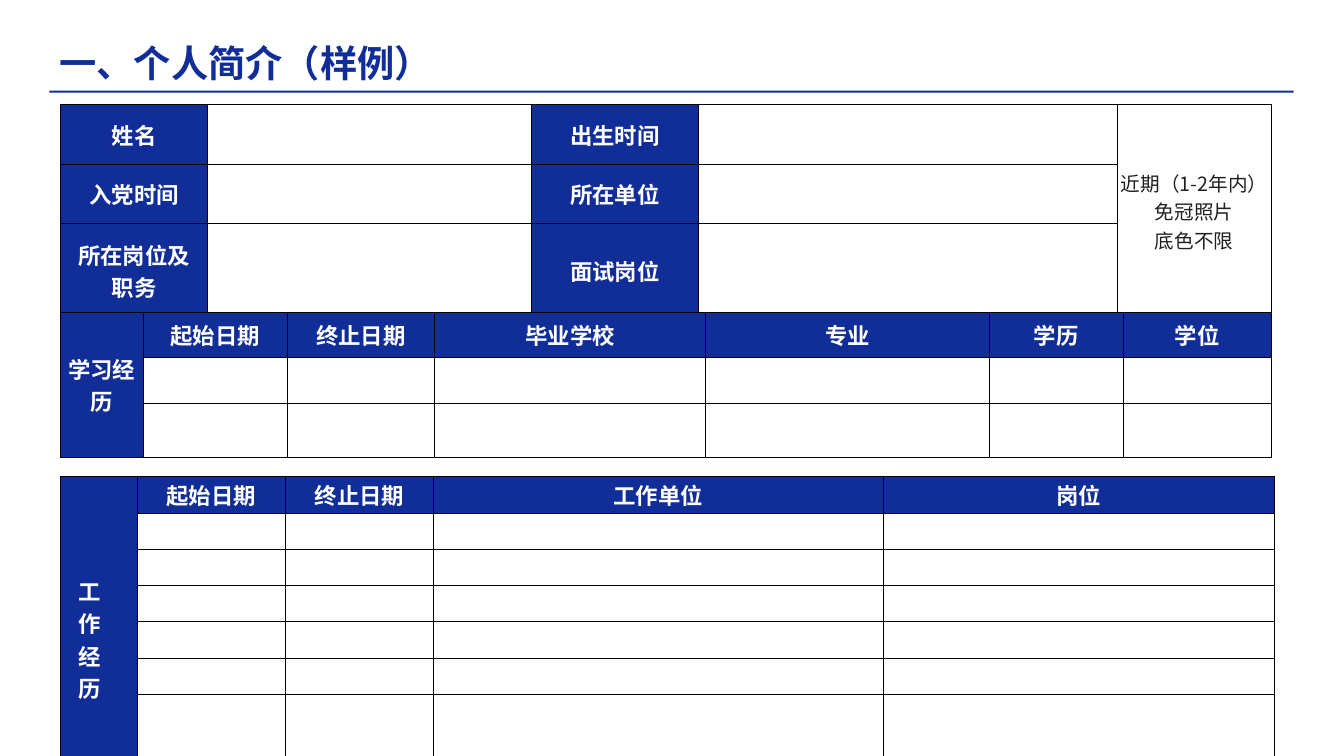
"""Build the personal profile slide with its three form tables."""
from lxml import etree
from pptx import Presentation
from pptx.dml.color import RGBColor
from pptx.enum.shapes import MSO_SHAPE
from pptx.enum.text import MSO_ANCHOR, PP_ALIGN
from pptx.oxml.ns import qn
from pptx.util import Pt

PX = 9144
FONT = "Noto Sans CJK SC"
COLORS = {"blue": "112D98", "white": "FFFFFF", "ink": "202020", "border": "000000"}


def style_text(tf, size, color, bold):
    """Format every run of a text frame."""
    for p in tf.paragraphs:
        for r in p.runs:
            r.font.size = Pt(size)
            r.font.bold = bold
            r.font.name = FONT
            r.font.color.rgb = RGBColor.from_string(COLORS[color])
            ea = etree.SubElement(r.font._element, qn("a:ea"))
            ea.set("typeface", FONT)


def add_form(slide, left, top, cols, rows, texts, merge_col):
    """Add a bordered form table with one column merged over all rows."""
    frame = slide.shapes.add_table(len(rows), len(cols), left * PX, top * PX,
                                   sum(cols) * PX, sum(rows) * PX)
    table = frame.table
    table.first_row = table.horz_banding = False
    for column, width in zip(table.columns, cols):
        column.width = width * PX
    for row, height in zip(table.rows, rows):
        row.height = height * PX
    for i in range(len(rows)):
        for j in range(len(cols)):
            cell = table.cell(i, j)
            cell.margin_left = cell.margin_right = PX
            cell.margin_top = cell.margin_bottom = 0
            cell.vertical_anchor = MSO_ANCHOR.MIDDLE
            tc_pr = cell._tc.get_or_add_tcPr()
            for side in ("lnL", "lnR", "lnT", "lnB"):
                ln = etree.SubElement(tc_pr, qn(f"a:{side}"), w=str(Pt(0.75)))
                fill = etree.SubElement(ln, qn("a:solidFill"))
                etree.SubElement(fill, qn("a:srgbClr"), val=COLORS["border"])
            text = texts.get((i, j))
            if not text:
                cell.fill.background()
                continue
            cell.text_frame.text = text
            for p in cell.text_frame.paragraphs:
                p.alignment = PP_ALIGN.CENTER
            if text.startswith("近期"):
                cell.fill.background()
                style_text(cell.text_frame, 14, "ink", False)
            else:
                cell.fill.solid()
                cell.fill.fore_color.rgb = RGBColor.from_string(COLORS["blue"])
                style_text(cell.text_frame, 16, "white", True)
    table.cell(0, merge_col).merge(table.cell(len(rows) - 1, merge_col))
    return table


prs = Presentation()
prs.slide_width, prs.slide_height = 1333 * PX, 750 * PX
slide = prs.slides.add_slide(prs.slide_layouts[6])

rule = slide.shapes.add_shape(MSO_SHAPE.RECTANGLE, 49 * PX, 90 * PX, 1234 * PX, 2 * PX)
rule.shadow.inherit = False
rule.fill.solid()
rule.fill.fore_color.rgb = RGBColor.from_string(COLORS["blue"])
rule.line.fill.background()

title = slide.shapes.add_textbox(49 * PX, 34 * PX, 1134 * PX, 56 * PX)
tf = title.text_frame
tf.word_wrap = True
tf.vertical_anchor = MSO_ANCHOR.MIDDLE
tf.text = "一、个人简介（样例）"
style_text(tf, 26.6, "blue", True)

profile = {
    (0, 0): "姓名", (0, 2): "出生时间",
    (1, 0): "入党时间", (1, 2): "所在单位",
    (2, 0): "所在岗位及职务", (2, 2): "面试岗位",
    (0, 4): "近期（1-2年内）\n免冠照片\n底色不限",
}
table = add_form(slide, 60, 104, [146, 321, 166, 415, 153], [59] * 3, profile, 4)
for j in (0, 2):
    cell = table.cell(2, j)
    cell.margin_left = cell.margin_right = 7 * PX

headings = ["学习经历", "起始日期", "终止日期", "毕业学校", "专业", "学历", "学位"]
study = {(0, j): text for j, text in enumerate(headings)}
table = add_form(slide, 60, 310, [82, 143, 146, 269, 281, 133, 147], [45] * 3, study, 0)
table.cell(0, 0)._tc.get_or_add_tcPr().set("vert", "eaVert")

headings = ["工\n作\n经\n历", "起始日期", "终止日期", "工作单位", "岗位"]
work = {(0, j): text for j, text in enumerate(headings)}
table = add_form(slide, 60, 473, [76, 147, 147, 446, 388], [36] * 7, work, 0)
table.cell(0, 0).margin_right = 20 * PX

prs.save("out.pptx")
